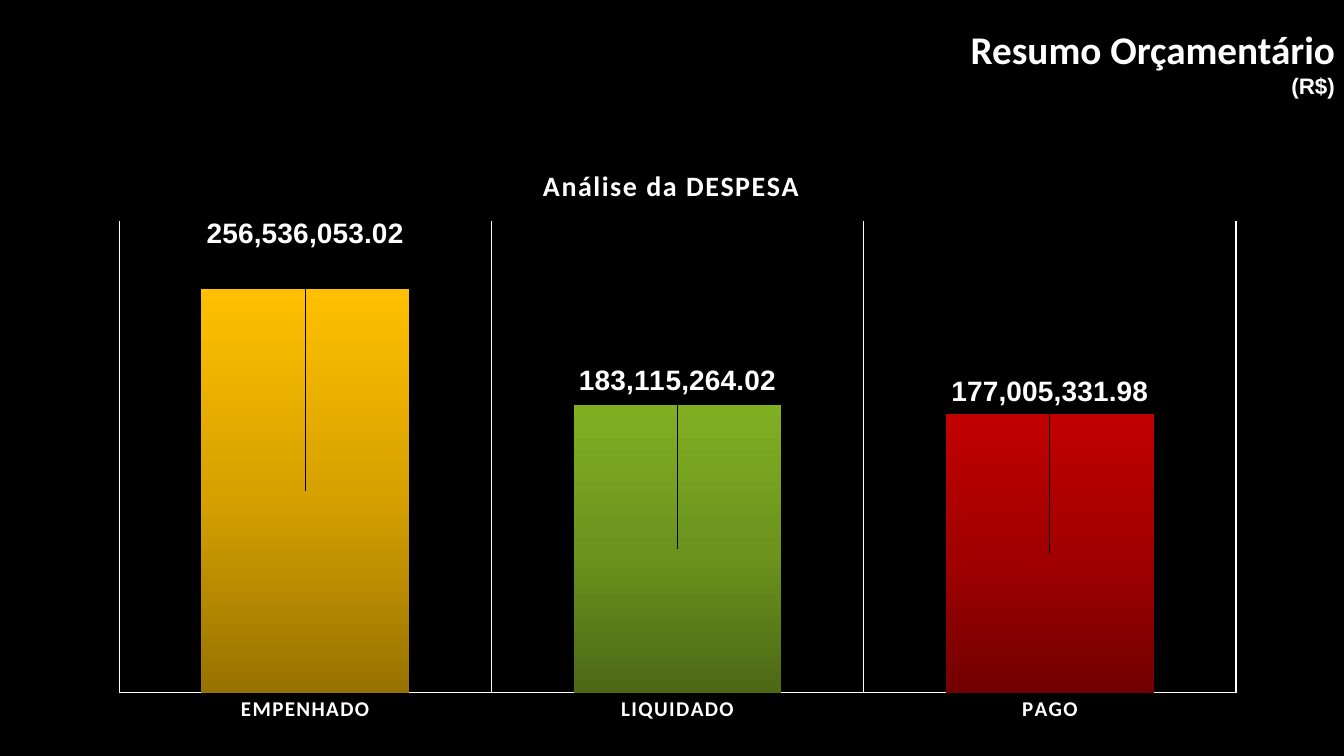
from lxml import etree
from pptx import Presentation
from pptx.chart.data import CategoryChartData
from pptx.dml.color import RGBColor
from pptx.enum.chart import XL_CHART_TYPE, XL_LABEL_POSITION, XL_TICK_MARK
from pptx.enum.text import MSO_ANCHOR, MSO_AUTO_SIZE, PP_ALIGN
from pptx.oxml import parse_xml
from pptx.oxml.ns import nsdecls, qn
from pptx.util import Inches, Pt

STACKED = XL_CHART_TYPE.COLUMN_STACKED
CENTER = XL_LABEL_POSITION.CENTER
NO_TICK = XL_TICK_MARK.NONE
TOP = MSO_ANCHOR.TOP
GROW = MSO_AUTO_SIZE.SHAPE_TO_FIT_TEXT
RIGHT = PP_ALIGN.RIGHT

BLACK = RGBColor(0x00, 0x00, 0x00)
WHITE = RGBColor(0xFF, 0xFF, 0xFF)
AMBER = [RGBColor(0x97, 0x72, 0x00), RGBColor(0xD7, 0xA2, 0x00), RGBColor(0xFF, 0xC0, 0x00)]
GREEN = [RGBColor(0x4C, 0x68, 0x15), RGBColor(0x6C, 0x94, 0x1D), RGBColor(0x80, 0xAF, 0x23)]
RED = [RGBColor(0x72, 0x00, 0x00), RGBColor(0xA2, 0x00, 0x00), RGBColor(0xC0, 0x00, 0x00)]

NUMBER_FORMAT = "#,##0.00"
EXPENSES = [
    ("EMPENHADO", 256536053.02, AMBER, -0.43),
    ("LIQUIDADO", 183115264.02, GREEN, -0.28),
    ("PAGO", 177005331.98, RED, -0.27),
]


def format_font(font, size, name="Calibri"):
    font.size = Pt(size)
    font.name = name
    font.bold = True
    font.color.rgb = WHITE


def add_text(p, text, size, name="Calibri", align=None):
    if align is not None:
        p.alignment = align
    r = p.add_run()
    r.text = text
    format_font(r.font, size, name)
    return r


def manual_layout(inner=False, **shares):
    layout = etree.Element(qn("c:layout"))
    manual = etree.SubElement(layout, qn("c:manualLayout"))
    if inner:
        etree.SubElement(manual, qn("c:layoutTarget"), val="inner")
    if inner or "edge" in shares:
        shares.pop("edge", None)
        for mode in ("xMode", "yMode"):
            etree.SubElement(manual, qn(f"c:{mode}"), val="edge")
    for key, share in shares.items():
        etree.SubElement(manual, qn(f"c:{key}"), val=str(share))
    return layout


def place(parent, layout, index):
    old = parent.find(qn("c:layout"))
    if old is not None:
        parent.remove(old)
    parent.insert(index, layout)


def fill_gradient(point, grad_of, colors):
    point.format.fill.gradient()
    stops = "".join(
        f'<a:gs pos="{i * 50000}"><a:srgbClr val="{color}"/></a:gs>'
        for i, color in enumerate(colors))
    grad = grad_of()
    grad.getparent().replace(grad, parse_xml(
        f'<a:gradFill {nsdecls("a")} rotWithShape="1"><a:gsLst>{stops}</a:gsLst>'
        '<a:lin ang="16200000" scaled="0"/></a:gradFill>'))


def add_heading(s, x, y, w, h):
    sp = s.shapes.title
    sp.left, sp.top, sp.width, sp.height = (Inches(v) for v in (x, y, w, h))
    tf = sp.text_frame
    tf.word_wrap = True
    tf.vertical_anchor = TOP
    tf.auto_size = GROW
    add_text(tf.paragraphs[0], "Resumo Orçamentário", 28, align=RIGHT)
    add_text(tf.add_paragraph(), "(R$)", 16, "Arial", RIGHT)


def format_axes(chart):
    axis = chart.category_axis
    axis.major_tick_mark = NO_TICK
    format_font(axis.tick_labels.font, 15)
    axis.tick_labels.font._element.set("spc", "100")
    axis.has_major_gridlines = True
    for line in (axis.format.line, axis.major_gridlines.format.line):
        line.color.rgb = WHITE
        line.width = Pt(0.75)
    values = chart.value_axis
    values.minimum_scale, values.maximum_scale = 0, 300000000
    values.has_major_gridlines = False
    values.visible = False


def format_columns(plot):
    plot.gap_width, plot.overlap = 79, 100
    plot.vary_by_categories = False
    series = plot.series[0]
    ser = series._element
    for i, (_, _, colors, shift) in enumerate(EXPENSES):
        point = series.points[i]
        fill_gradient(point, lambda: ser.xpath("c:dPt//a:gradFill")[-1], colors)
        label = point.data_label
        format_font(label.font, 20, "Arial")
        label.position = CENTER
        d_lbl = ser.xpath(f'c:dLbls/c:dLbl[c:idx/@val="{i}"]')[0]
        place(d_lbl, manual_layout(x=0, y=shift), 1)
        number = etree.Element(qn("c:numFmt"), formatCode=NUMBER_FORMAT, sourceLinked="0")
        d_lbl.insert(2, number)


def add_expense_chart(s, x, y, w, h):
    data = CategoryChartData(number_format=NUMBER_FORMAT)
    data.categories = [row[0] for row in EXPENSES]
    data.add_series("Series 1", [row[1] for row in EXPENSES])
    box = [Inches(v) for v in (x, y, w, h)]
    chart = s.shapes.add_chart(STACKED, *box, data).chart
    chart.has_legend = False
    chart.font.name = "Calibri"
    chart.font.size = Pt(10)
    chart.font.color.rgb = WHITE
    chart.has_title = True
    title = chart.chart_title
    r = add_text(title.text_frame.paragraphs[0], "Análise da DESPESA", 20)
    r.font._element.set("spc", "100")
    place(title._element, manual_layout(edge=True, x=0.38, y=0.04), 1)
    area = chart._chartSpace.chart.plotArea
    place(area, manual_layout(inner=True, x=0.02, y=0.14, w=0.96, h=0.79), 0)
    format_axes(chart)
    format_columns(chart.plots[0])


def main():
    prs = Presentation()
    prs.slide_width, prs.slide_height = Inches(13.33), Inches(7.5)
    s = prs.slides.add_slide(prs.slide_layouts[5])
    s.background.fill.solid()
    s.background.fill.fore_color.rgb = BLACK
    add_heading(s, 4.91, 0.2, 8.43, 0.84)
    add_expense_chart(s, 0.95, 1.36, 11.54, 5.93)
    prs.save("out.pptx")


if __name__ == "__main__":
    main()
